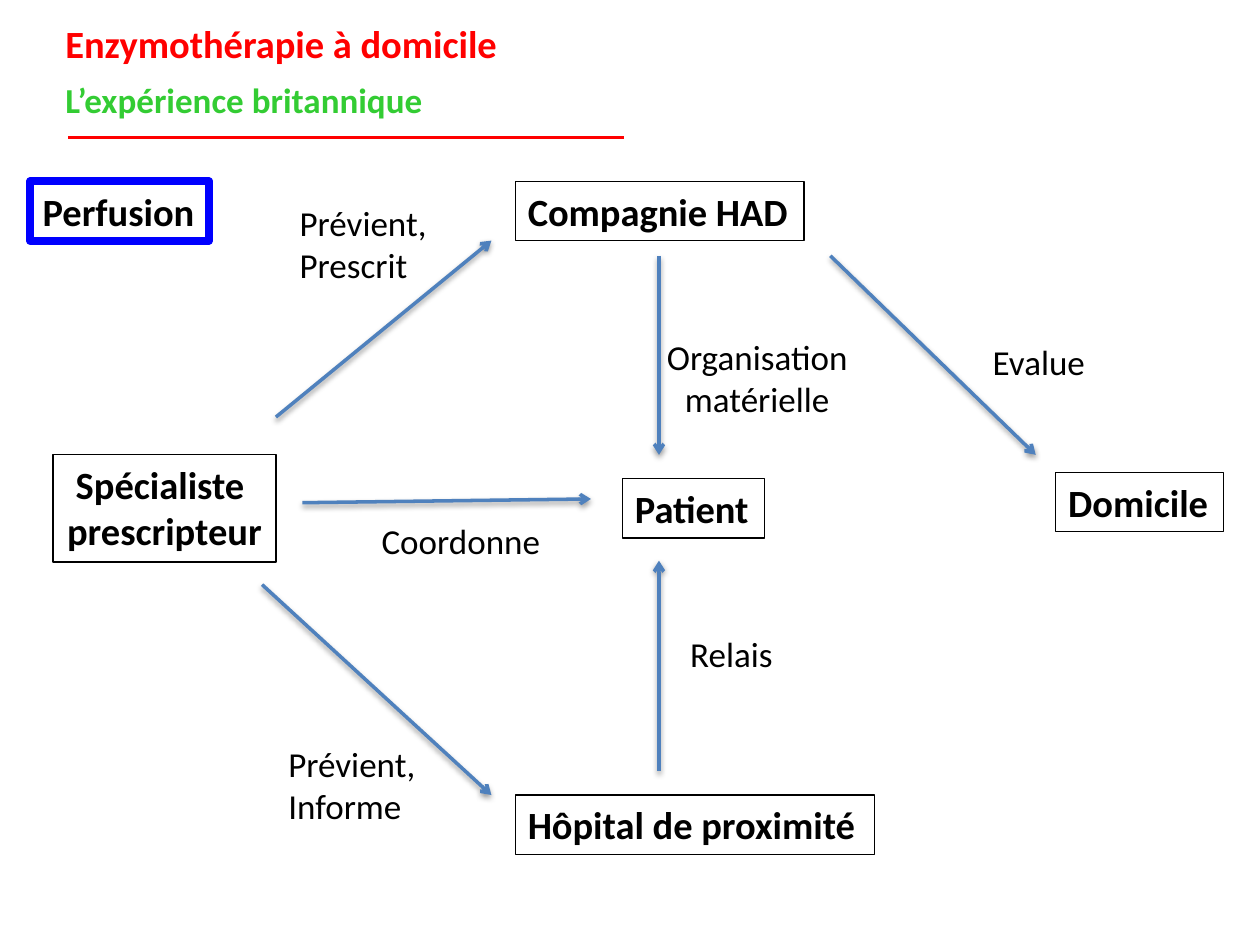
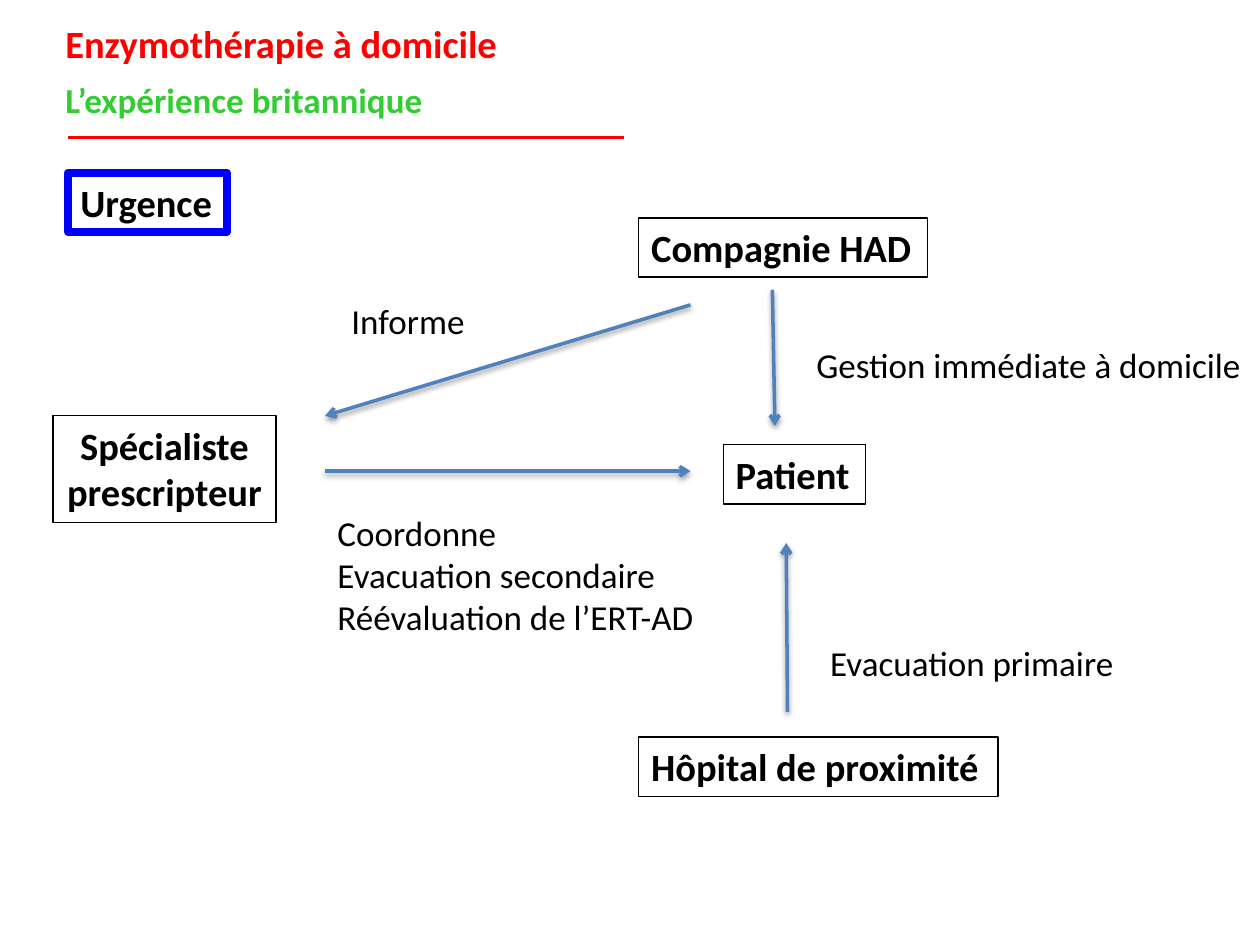
from dataclasses import dataclass

from lxml import etree
from pptx import Presentation
from pptx.dml.color import RGBColor
from pptx.enum.shapes import MSO_CONNECTOR, MSO_SHAPE
from pptx.enum.text import MSO_ANCHOR, MSO_AUTO_SIZE, PP_ALIGN
from pptx.oxml.ns import qn
from pptx.util import Inches, Pt

STRAIGHT = MSO_CONNECTOR.STRAIGHT
RECTANGLE = MSO_SHAPE.RECTANGLE
TOP = MSO_ANCHOR.TOP
GROW = MSO_AUTO_SIZE.SHAPE_TO_FIT_TEXT
LEFT, CENTER = PP_ALIGN.LEFT, PP_ALIGN.CENTER


@dataclass(frozen=True)
class Theme:
    font: str = "Calibri"
    ink: str = "000000"
    title: str = "FF0000"
    subtitle: str = "33CC33"
    topic: str = "0000FF"
    arrow: str = "4F81BD"
    large: int = 22
    normal: int = 20


class Diagram:
    def __init__(self, deck, theme):
        self.deck = deck
        self.theme = theme
        self.page = None

    def new_page(self):
        self.page = self.deck.slides.add_slide(self.deck.slide_layouts[6])
        self.line((0.54, 1.09), (4.95, 1.09), self.theme.title, 1.5)
        box = self.page.shapes.add_textbox(Inches(0.42), Inches(0), Inches(3.68), Inches(1))
        self.fill_text(box, [
            ("Enzymothérapie à domicile", self.theme.large, self.theme.title, True),
            ("L’expérience britannique", self.theme.normal, self.theme.subtitle, True),
        ], spacing=1.3)

    def fill_text(self, box, lines, align=LEFT, spacing=None):
        frame = box.text_frame
        frame.word_wrap = False
        frame.auto_size = GROW
        frame.vertical_anchor = TOP
        for index, (text, size, color, bold) in enumerate(lines):
            para = frame.paragraphs[0] if index == 0 else frame.add_paragraph()
            para.alignment = align
            if spacing:
                para.line_spacing = spacing
            span = para.add_run()
            span.text = text
            span.font.name = self.theme.font
            span.font.size = Pt(size)
            span.font.bold = bold
            span.font.color.rgb = RGBColor.from_string(color)

    def height(self, lines, size):
        return Inches(round(0.1 + len(lines) * size * 1.22 / 72, 2))

    def node(self, left, top, width, *lines, color=None, weight=0.75):
        size = self.theme.large
        box = self.page.shapes.add_shape(
            RECTANGLE, Inches(left), Inches(top), Inches(width), self.height(lines, size))
        box.shadow.inherit = False
        box.fill.background()
        box.line.color.rgb = RGBColor.from_string(color or self.theme.ink)
        box.line.width = Pt(weight)
        align = CENTER if len(lines) > 1 else LEFT
        self.fill_text(box, [(text, size, self.theme.ink, True) for text in lines], align)

    def topic(self, left, top, width, text):
        self.node(left, top, width, text, color=self.theme.topic, weight=4.5)

    def label(self, left, top, width, *lines, align=LEFT):
        size = self.theme.normal
        box = self.page.shapes.add_textbox(
            Inches(left), Inches(top), Inches(width), self.height(lines, size))
        self.fill_text(box, [(text, size, self.theme.ink, False) for text in lines], align)

    def line(self, start, end, color, weight):
        line = self.page.shapes.add_connector(
            STRAIGHT, *(Inches(value) for value in (*start, *end)))
        line.line.color.rgb = RGBColor.from_string(color)
        line.line.width = Pt(weight)
        effects = etree.SubElement(line._element.spPr, qn("a:effectLst"))
        return line, effects

    def arrow(self, start, end):
        line, effects = self.line(start, end, self.theme.arrow, 2)
        outline = line._element.spPr.find(qn("a:ln"))
        etree.SubElement(outline, qn("a:tailEnd"), type="arrow")
        shadow = etree.SubElement(effects, qn("a:outerShdw"), blurRad="40000",
                                  dist="20000", dir="5400000", rotWithShape="0")
        shade = etree.SubElement(shadow, qn("a:srgbClr"), val=self.theme.ink)
        etree.SubElement(shade, qn("a:alpha"), val="38000")


def build_infusion(diagram):
    diagram.new_page()
    diagram.node(4.94, 3.8, 1.13, "Patient")
    diagram.node(0.42, 3.61, 1.77, "Spécialiste ", "prescripteur")
    diagram.node(4.09, 1.44, 2.29, "Compagnie HAD")
    diagram.node(4.09, 6.31, 2.85, "Hôpital de proximité")
    diagram.node(8.38, 3.75, 1.33, "Domicile")
    diagram.topic(0.24, 1.44, 1.42, "Perfusion")

    diagram.label(5.38, 4.97, 0.87, "Relais")
    diagram.label(7.78, 2.65, 0.95, "Evalue")
    diagram.label(5.18, 2.61, 1.66, "Organisation ", "matérielle", align=CENTER)
    diagram.label(2.93, 4.07, 1.47, "Coordonne")
    diagram.label(2.28, 1.55, 1.23, "Prévient,", "Prescrit")
    diagram.label(2.19, 5.84, 1.23, "Prévient,", "Informe")

    for start, end in (
        ((5.23, 6.12), (5.23, 4.45)),
        ((5.23, 2.03), (5.23, 3.61)),
        ((6.59, 2.03), (8.22, 3.61)),
        ((2.4, 3.99), (4.69, 3.96)),
        ((2.19, 3.31), (3.9, 1.91)),
        ((2.08, 4.64), (3.9, 6.31)),
    ):
        diagram.arrow(start, end)


def build_emergency(diagram):
    diagram.new_page()
    diagram.node(5.74, 3.53, 1.13, "Patient")
    diagram.node(0.42, 3.3, 1.77, "Spécialiste", "prescripteur")
    diagram.node(5.07, 1.73, 2.29, "Compagnie HAD")
    diagram.node(5.07, 5.85, 2.85, "Hôpital de proximité")
    diagram.topic(0.54, 1.37, 1.26, "Urgence")

    diagram.label(2.58, 4.01, 3.09, "Coordonne", "Evacuation secondaire",
                  "Réévaluation de l’ERT-AD")
    diagram.label(6.49, 5.04, 2.48, "Evacuation primaire")
    diagram.label(6.38, 2.68, 3.61, "Gestion immédiate à domicile")
    diagram.label(2.69, 2.33, 1.11, "Informe")

    for start, end in (
        ((2.58, 3.74), (5.48, 3.74)),
        ((6.25, 5.65), (6.24, 4.31)),
        ((6.13, 2.3), (6.15, 3.38)),
        ((5.48, 2.42), (2.58, 3.3)),
    ):
        diagram.arrow(start, end)


def main():
    deck = Presentation()
    deck.slide_width = Inches(10)
    deck.slide_height = Inches(7.5)
    diagram = Diagram(deck, Theme())
    build_infusion(diagram)
    build_emergency(diagram)
    deck.save("out.pptx")


if __name__ == "__main__":
    main()
